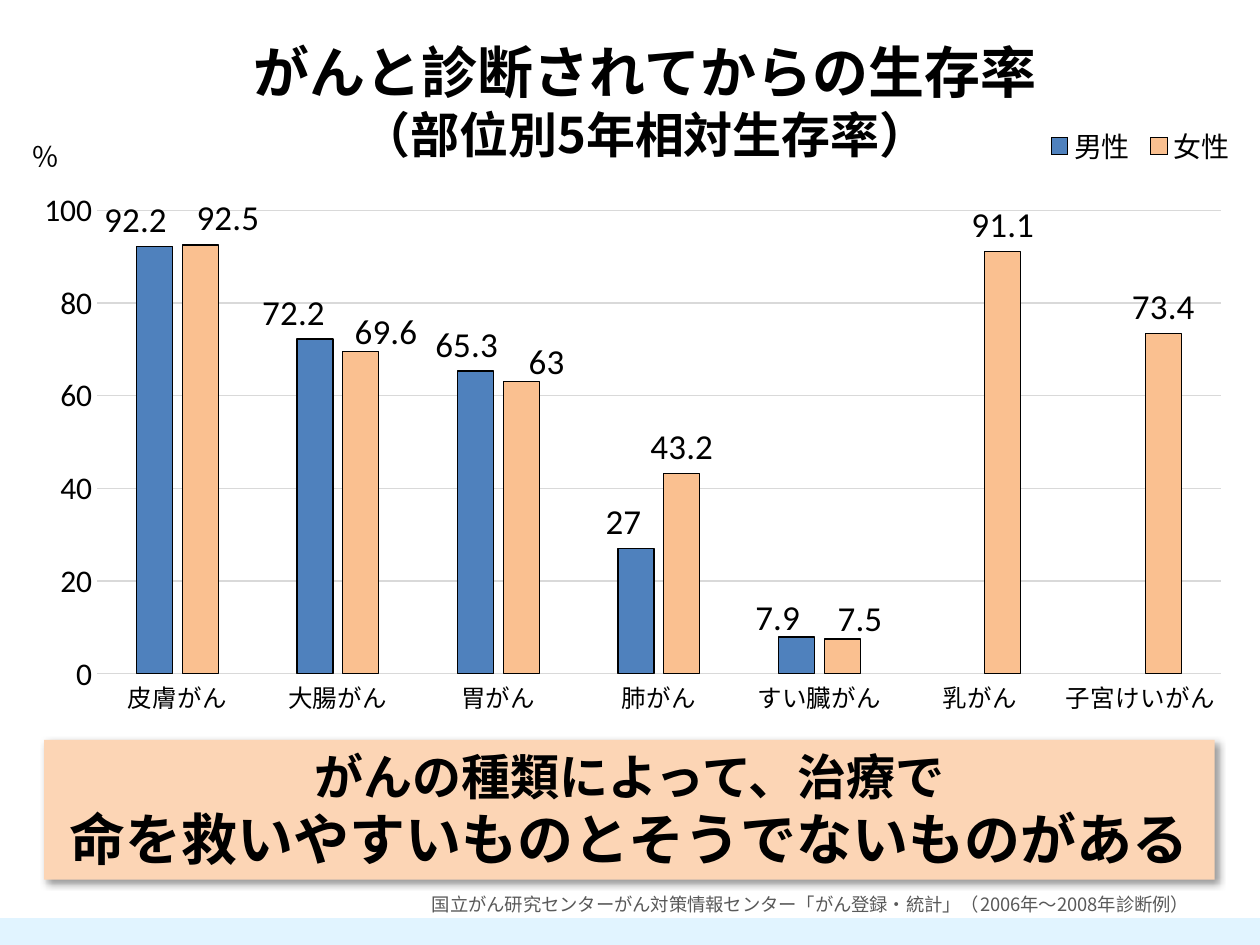
from dataclasses import dataclass

from lxml import etree
from pptx import Presentation
from pptx.chart.data import CategoryChartData
from pptx.dml.color import RGBColor
from pptx.enum import chart as charts, shapes, text
from pptx.oxml import parse_xml
from pptx.oxml.ns import nsdecls, qn
from pptx.util import Inches, Pt


@dataclass(frozen=True)
class Theme:
    japanese: str = "Noto Sans CJK JP"
    latin: str = "Calibri"
    background: str = "E1F4FF"
    page: str = "FFFFFF"
    ink: str = "000000"
    muted: str = "595959"
    rule: str = "D9D9D9"
    highlight: str = "FCD5B5"
    male: str = "4F81BD"
    female: str = "FAC090"
    heading: float = 32
    subheading: float = 28
    value: float = 20
    scale: float = 18
    legend: float = 16
    category: float = 14
    source: float = 10.5


theme = Theme()


def style_font(font, size, color=theme.ink, name=theme.latin, bold=False):
    font.size, font.name, font.bold = Pt(size), name, bold
    font.color.rgb = RGBColor.from_string(color)


def write_lines(shape, lines, align, anchor=text.MSO_ANCHOR.TOP, **style):
    frame = shape.text_frame
    frame.word_wrap = True
    frame.vertical_anchor = anchor
    frame.auto_size = text.MSO_AUTO_SIZE.SHAPE_TO_FIT_TEXT
    for index, (words, size) in enumerate(lines):
        paragraph = frame.add_paragraph() if index else frame.paragraphs[0]
        paragraph.alignment = align
        run = paragraph.add_run()
        run.text = words
        style_font(run.font, size, **style)
        east_asian = etree.SubElement(run.font._element, qn("a:ea"))
        east_asian.set("typeface", theme.japanese)


presentation = Presentation()
presentation.slide_width, presentation.slide_height = Inches(10), Inches(7.5)
width, height = presentation.slide_width, presentation.slide_height
slide = presentation.slides.add_slide(presentation.slide_layouts[5])
center, left = text.PP_ALIGN.CENTER, text.PP_ALIGN.LEFT

# Pale background with a white page that leaves a strip at the foot
slide.background.fill.solid()
slide.background.fill.fore_color.rgb = RGBColor.from_string(theme.background)
page = slide.shapes.add_shape(shapes.MSO_SHAPE.RECTANGLE,
                              0, int(-0.03 * height), width, height)
page.shadow.inherit = False
page.fill.solid()
page.fill.fore_color.rgb = RGBColor.from_string(theme.page)
page.line.color.rgb = RGBColor.from_string(theme.page)
page.line.width = Pt(2)
slide.shapes._spTree.insert(2, page._element)  # behind the title

# Title
title = slide.shapes.title
title.left, title.top = int(0.059 * width), int(0.033 * height)
title.width, title.height = int(0.906 * width), int(0.148 * height)
write_lines(title, [("がんと診断されてからの生存率", theme.heading),
                    ("（部位別5年相対生存率）", theme.subheading)],
            center, name=theme.japanese, bold=True)

# Survival data, with label shifts as shares of the chart's size
categories = ["皮膚がん", "大腸がん", "胃がん", "肺がん", "すい臓がん", "乳がん", "子宮けいがん"]
series_table = [
    ("男性", theme.male, [92.2, 72.2, 65.3, 27, 7.9, None, None],
     {0: (-0.015, 0), 1: (-0.017, 0), 2: (-0.007, 0), 3: (-0.01, 0), 4: (-0.015, 0.01)}),
    ("女性", theme.female, [92.5, 69.6, 63, 43.2, 7.5, 91.1, 73.4],
     {0: (0.022, 0), 1: (0.02, 0.01), 2: (0.02, 0.01), 4: (0.014, 0.01)}),
]
data = CategoryChartData()
data.categories = categories
for name, _, values, _ in series_table:
    data.add_series(name, values)

# Column chart
chart = slide.shapes.add_chart(
    charts.XL_CHART_TYPE.COLUMN_CLUSTERED, int(-0.002 * width), int(0.072 * height),
    int(1.002 * width), int(0.749 * height), data).chart
chart.has_title = False
style_font(chart.font, 10)
plot = chart.plots[0]
plot.vary_by_categories = False
plot.gap_width, plot.overlap = 219, -27

for series, (_, color, _, shifts) in zip(plot.series, series_table):
    series.format.fill.solid()
    series.format.fill.fore_color.rgb = RGBColor.from_string(color)
    series.format.line.color.rgb = RGBColor.from_string(theme.ink)
    series.format.line.width = Pt(0.75)
    labels = series.data_labels
    labels.show_value = True
    labels.position = charts.XL_LABEL_POSITION.OUTSIDE_END
    style_font(labels.font, theme.value)
    for index, (x, y) in shifts.items():
        label = series.points[index].data_label
        style_font(label.font, theme.value)
        label.position = charts.XL_LABEL_POSITION.OUTSIDE_END
        element = series._element.xpath(f'.//c:dLbl[c:idx/@val="{index}"]')[0]
        element.insert(1, parse_xml(
            f'<c:layout {nsdecls("c")}><c:manualLayout>'
            f'<c:x val="{x}"/><c:y val="{y}"/></c:manualLayout></c:layout>'))

# Axes
category_axis, value_axis = chart.category_axis, chart.value_axis
for axis, size in ((category_axis, theme.category), (value_axis, theme.scale)):
    axis.major_tick_mark = axis.minor_tick_mark = charts.XL_TICK_MARK.NONE
    style_font(axis.tick_labels.font, size)
value_axis.minimum_scale, value_axis.maximum_scale = 0, 100
value_axis.major_unit = 20
value_axis.has_major_gridlines = True
value_axis.format.line.fill.background()
for rule in (category_axis.format.line, value_axis.major_gridlines.format.line):
    rule.color.rgb = RGBColor.from_string(theme.rule)
    rule.width = Pt(0.75)

# Legend, and the places of plot and legend within the chart
chart.has_legend = True
chart.legend.position = charts.XL_LEGEND_POSITION.BOTTOM
chart.legend.include_in_layout = False
style_font(chart.legend.font, theme.legend)
plot_area = chart._chartSpace.chart.plotArea
legend = chart.legend._element
for owner, at, target, box in (
        (plot_area, 0, '<c:layoutTarget val="inner"/>', (0.079, 0.201, 0.89, 0.655)),
        (legend, 1, "", (0.825, 0.08, 0.16, 0.06))):
    for old in owner.findall(qn("c:layout")):
        owner.remove(old)
    places = "".join(f'<c:{key} val="{share}"/>' for key, share in zip("xywh", box))
    owner.insert(at, parse_xml(
        f'<c:layout {nsdecls("c")}><c:manualLayout>{target}'
        f'<c:xMode val="edge"/><c:yMode val="edge"/>{places}'
        f'</c:manualLayout></c:layout>'))

# Unit above the value axis
unit = slide.shapes.add_textbox(int(0.013 * width), int(0.131 * height),
                                int(0.047 * width), int(0.069 * height))
write_lines(unit, [("％", theme.legend)], center, text.MSO_ANCHOR.MIDDLE)

# Key message with a soft shadow
message = slide.shapes.add_shape(
    shapes.MSO_SHAPE.RECTANGLE, int(0.035 * width), int(0.783 * height),
    int(0.929 * width), int(0.148 * height))
message.shadow.inherit = False
message.fill.solid()
message.fill.fore_color.rgb = RGBColor.from_string(theme.highlight)
message.line.fill.background()
effects = message._element.spPr.find(qn("a:effectLst"))
effects.append(parse_xml(
    f'<a:outerShdw {nsdecls("a")} blurRad="{Pt(4)}" dist="{Pt(3)}" dir="2700000" '
    f'algn="tl" rotWithShape="0"><a:srgbClr val="{theme.ink}">'
    f'<a:alpha val="40000"/></a:srgbClr></a:outerShdw>'))
write_lines(message, [("がんの種類によって、治療で", theme.subheading),
                      ("命を救いやすいものとそうでないものがある", theme.heading)],
            center, name=theme.japanese, bold=True)

# Source of the figures
source = slide.shapes.add_textbox(int(0.333 * width), int(0.939 * height),
                                  int(0.669 * width), int(0.037 * height))
write_lines(source, [("国立がん研究センターがん対策情報センター「がん登録・統計」（2006年～2008年診断例）",
                      theme.source)], left, color=theme.muted, name=theme.japanese)

presentation.save("out.pptx")
